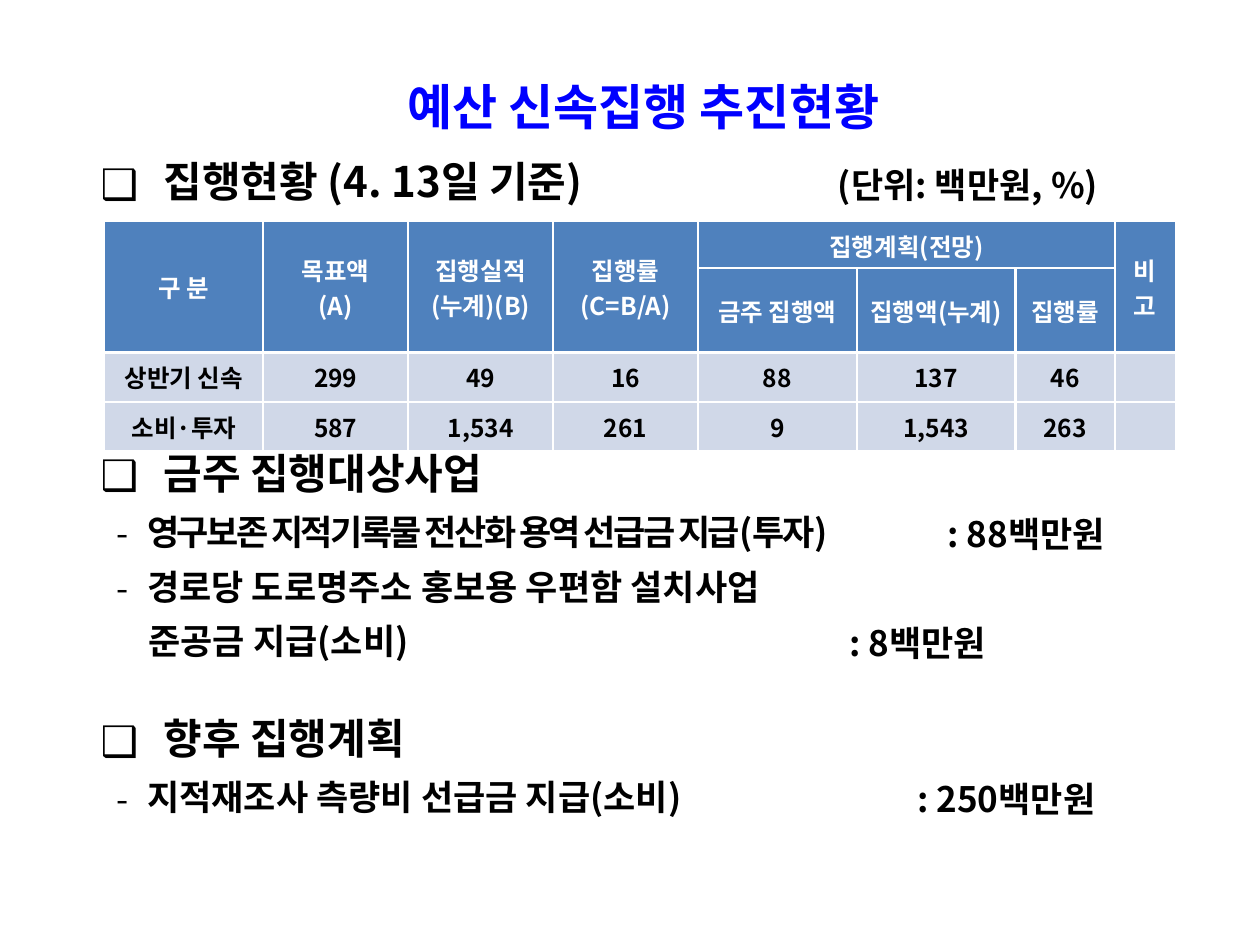
from dataclasses import dataclass

from lxml.etree import SubElement
from pptx import Presentation
from pptx.dml.color import RGBColor as RGB
from pptx.enum.text import MSO_ANCHOR as ANCHOR, PP_ALIGN as ALIGN
from pptx.oxml.ns import qn
from pptx.util import Inches, Pt


@dataclass(frozen=True)
class Theme:
    """Colours, font and type sizes of the slide."""
    font: str = "Noto Sans CJK KR"
    blue: str = "0000FF"
    black: str = "000000"
    white: str = "FFFFFF"
    header: str = "4F81BD"
    body: str = "D0D8E8"
    title: int = 28
    heading: int = 24
    item: int = 20
    cell: int = 14


T = Theme()
COLS = [1.26, 1.15, 1.15, 1.15, 1.26, 1.26, 0.79, 0.48]
ROWS = [0.37, 0.67, 0.39, 0.39]
ROW_LINES = [1, 1.5, 2.25, 1.5, 1]
COL_LINES = [1] + [1.5] * 6 + [1, 1]
MERGES = [(0, c, 1, c) for c in (0, 1, 2, 3, 7)] + [(0, 4, 0, 6)]
CELLS = [
    ["구 분", "목표액\n(A)", "집행실적(누계)(B)", "집행률\n(C=B/A)",
     "집행계획(전망)", "", "", "비 고"],
    ["", "", "", "", "금주 집행액", "집행액(누계)", "집행률", ""],
    ["상반기 신속", "299", "49", "16", "88", "137", "46", ""],
    ["소비·투자", "587", "1,534", "261", "9", "1,543", "263", ""],
]
HEADING = dict(size=T.heading, left=1, indent=-0.5, bullet="❑", line=1.4)
ITEM = dict(size=T.item, left=0.87, indent=-0.24, bullet="-", line=1.3)
OUTLINE = [
    ("예산 신속집행 추진현황",
     dict(size=T.title, color=T.blue, align=ALIGN.CENTER, left=0.47)),
    ("집행현황 (4. 13일 기준)", HEADING),
    ("금주 집행대상사업", dict(HEADING, before=126.3)),
    ("영구보존 지적기록물 전산화 용역 선급금 지급(투자)",
     dict(ITEM, spacing=-1.5)),
    ("경로당 도로명주소 홍보용 우편함 설치사업", ITEM),
    ("준공금 지급(소비)", dict(size=T.item, left=0.88, line=1.3)),
    ("향후 집행계획", dict(HEADING, before=17.8)),
    ("지적재조사 측량비 선급금 지급(소비)", ITEM),
]
AMOUNTS = [
    ("(단위: 백만원, %)", 6.65, 1.3),
    (": 88백만원", 7.52, 4.07),
    (": 8백만원", 6.74, 4.93),
    (": 250백만원", 7.28, 6.17),
]


def write(p, text, size=T.item, color=T.black, align=ALIGN.LEFT, left=0,
          indent=0, bullet=None, before=0, spacing=0, line=1.0):
    """Write one formatted paragraph."""
    pPr = p._p.get_or_add_pPr()
    pPr.set("marL", str(Inches(left)))
    pPr.set("indent", str(Inches(indent)))
    p.alignment = align
    p.line_spacing = line
    p.space_before = Pt(before)
    if bullet:
        clr = SubElement(pPr, qn("a:buClr"))
        SubElement(clr, qn("a:srgbClr"), val=T.black)
        SubElement(pPr, qn("a:buFont"), typeface=T.font)
        SubElement(pPr, qn("a:buChar"), char=bullet)
    if not text:
        SubElement(p._p, qn("a:endParaRPr"), sz=str(size * 100))
        return
    r = p.add_run()
    r.text = text
    f = r.font
    f.size, f.bold, f.name = Pt(size), True, T.font
    f.color.rgb = RGB.from_string(color)
    rPr = r._r.get_or_add_rPr()
    SubElement(rPr, qn("a:ea"), typeface=T.font)
    if spacing:
        rPr.set("spc", str(int(spacing * 100)))


def fill_frame(tf, paragraphs):
    """Write (text, format) pairs as paragraphs of a frame."""
    for i, (text, fmt) in enumerate(paragraphs):
        write(tf.add_paragraph() if i else tf.paragraphs[0], text, **fmt)


def add_text(s, x, y, w, h, paragraphs, inset=(0, 0)):
    """Add a text box with side and top insets."""
    tf = s.shapes.add_textbox(*map(Inches, (x, y, w, h))).text_frame
    tf.word_wrap = True
    tf.margin_left = tf.margin_right = Inches(inset[0])
    tf.margin_top, tf.margin_bottom = Inches(inset[1]), 0
    fill_frame(tf, paragraphs)


def style_cell(cell, row, col):
    """Give a cell its borders and fill."""
    tcPr = cell._tc.get_or_add_tcPr()
    widths = {"L": COL_LINES[col], "R": COL_LINES[col + cell.span_width],
              "T": ROW_LINES[row], "B": ROW_LINES[row + cell.span_height]}
    for side, width in widths.items():
        ln = SubElement(tcPr, qn(f"a:ln{side}"), w=str(Pt(width)))
        fill = SubElement(ln, qn("a:solidFill"))
        SubElement(fill, qn("a:srgbClr"), val=T.white)
    cell.vertical_anchor = ANCHOR.MIDDLE
    cell.margin_left = cell.margin_right = Inches(0.1)
    cell.margin_top = cell.margin_bottom = Inches(0.05)
    cell.fill.solid()
    cell.fill.fore_color.rgb = RGB.from_string(T.header if row < 2 else T.body)


def add_budget_table(s, x, y):
    """Add the budget execution table."""
    table = s.shapes.add_table(
        len(ROWS), len(COLS), Inches(x), Inches(y),
        Inches(sum(COLS)), Inches(sum(ROWS))).table
    table.first_row = table.horz_banding = False
    for column, width in zip(table.columns, COLS):
        column.width = Inches(width)
    for row, height in zip(table.rows, ROWS):
        row.height = Inches(height)
    for top, left, bottom, right in MERGES:
        table.cell(top, left).merge(table.cell(bottom, right))
    for i, texts in enumerate(CELLS):
        fmt = dict(size=T.cell, align=ALIGN.CENTER,
                   color=T.white if i < 2 else T.black)
        for j, text in enumerate(texts):
            cell = table.cell(i, j)
            style_cell(cell, i, j)
            fill_frame(cell.text_frame, [(t, fmt) for t in text.split("\n")])


def main():
    """Build and save the slide."""
    prs = Presentation()
    prs.slide_width, prs.slide_height = Inches(10), Inches(7.5)
    s = prs.slides.add_slide(prs.slide_layouts[6])
    add_text(s, 0.2, 0.43, 9.34, 6.78, OUTLINE, inset=(0.1, 0.18))
    for text, x, y in AMOUNTS:
        add_text(s, x, y, 2.5, 0.4, [(text, {})])
    add_budget_table(s, 0.83, 1.76)
    prs.save("out.pptx")


if __name__ == "__main__":
    main()
